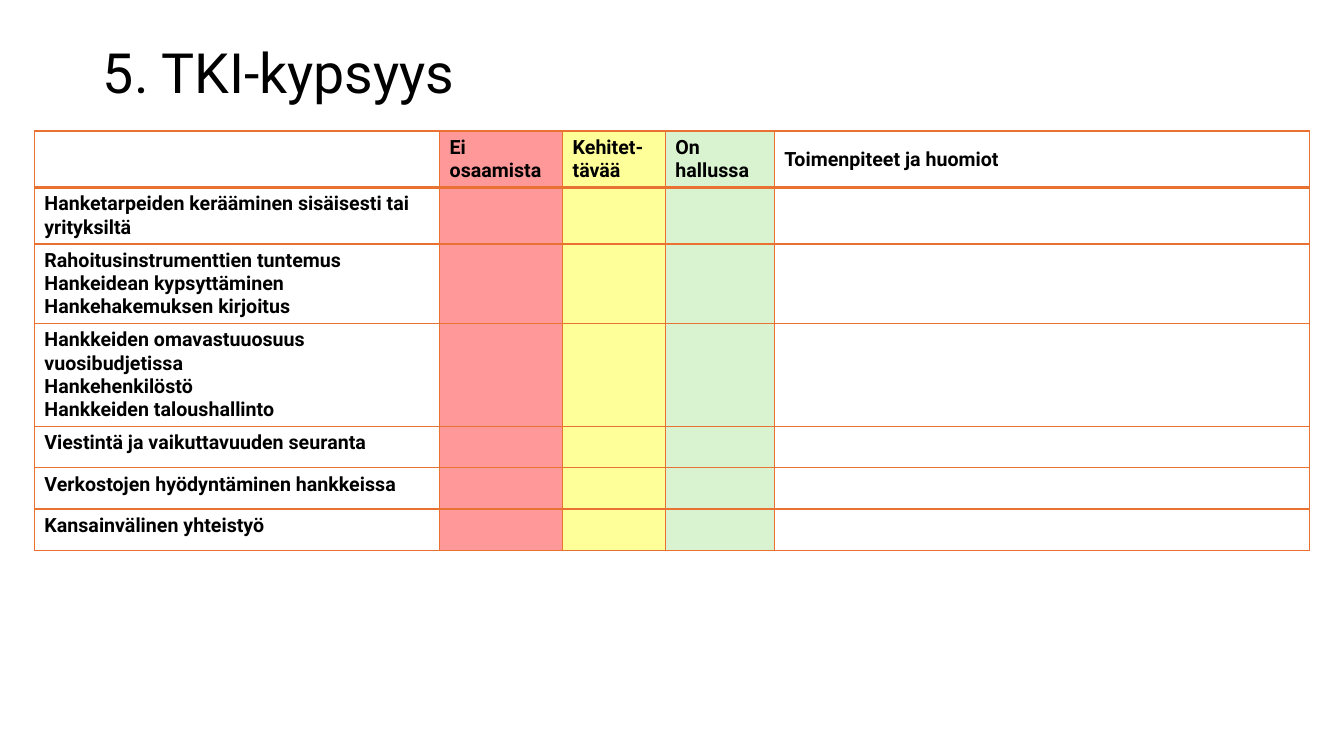
from lxml.etree import SubElement
from pptx import Presentation
from pptx.dml.color import RGBColor
from pptx.enum.text import MSO_ANCHOR as Anchor, MSO_AUTO_SIZE as AutoSize, PP_ALIGN as Align
from pptx.oxml.ns import qn
from pptx.util import Inches, Pt

BLACK = RGBColor(0x00, 0x00, 0x00)
ORANGE = RGBColor(0xE9, 0x71, 0x32)
RED = RGBColor(0xFF, 0x99, 0x99)
YELLOW = RGBColor(0xFF, 0xFF, 0x99)
GREEN = RGBColor(0xD9, 0xF2, 0xD0)

TITLE_BOX = (0.92, 0.4, 11.5, 0.7)
MATRIX_BOX = (0.34, 1.3, 12.65, 4.18)
COLUMN_WIDTHS = (4.02, 1.22, 1.02, 1.08, 5.31)
COLUMN_FILLS = (None, RED, YELLOW, GREEN, None)
MIN_ROW, LINE, CELL_PADDING = 0.41, 0.23, 0.1

HEADINGS = ("", "Ei osaamista", "Kehitet-tävää", "On hallussa", "Toimenpiteet ja huomiot")
TOPICS = (
    (2, "Hanketarpeiden kerääminen sisäisesti tai yrityksiltä"),
    (3, "Rahoitusinstrumenttien tuntemus\nHankeidean kypsyttäminen\nHankehakemuksen kirjoitus"),
    (4, "Hankkeiden omavastuuosuus vuosibudjetissa\nHankehenkilöstö\nHankkeiden taloushallinto"),
    (1, "Viestintä ja vaikuttavuuden seuranta"),
    (1, "Verkostojen hyödyntäminen hankkeissa"),
    (1, "Kansainvälinen yhteistyö"),
)


def write(frame, text, size=14, bold=False, spacing=1.0, anchor=Anchor.TOP):
    frame.text = text
    frame.vertical_anchor = anchor
    for paragraph in frame.paragraphs:
        paragraph.alignment = Align.LEFT
        paragraph.line_spacing = spacing
        font = paragraph.font
        if paragraph.runs:
            font = paragraph.runs[0].font
        font.name = "Roboto"
        font.size = Pt(size)
        font.bold = bold
        font.color.rgb = BLACK


def draw_borders(cell, **widths):
    properties = cell._tc.get_or_add_tcPr()
    for side in ("lnL", "lnR", "lnT", "lnB"):
        border = SubElement(properties, qn(f"a:{side}"), w=str(Pt(widths.get(side, 1))))
        paint = SubElement(border, qn("a:solidFill"))
        SubElement(paint, qn("a:srgbClr"), val=str(ORANGE))


def fill_cell(cell, color):
    if color is None:
        cell.fill.background()
    else:
        cell.fill.solid()
        cell.fill.fore_color.rgb = color


def add_heading(slide, box):
    title = slide.shapes.title
    title.left, title.top, title.width, title.height = map(Inches, box)
    title.text_frame.auto_size = AutoSize.NONE
    write(title.text_frame, "5. TKI-kypsyys", size=39.6, spacing=0.9, anchor=Anchor.MIDDLE)


def add_maturity_matrix(slide, box):
    rows = [(2, HEADINGS)] + [(lines, (topic, "", "", "", "")) for lines, topic in TOPICS]
    matrix = slide.shapes.add_table(len(rows), len(HEADINGS), *map(Inches, box)).table
    matrix.first_row = matrix.horz_banding = False
    for column, width in zip(matrix.columns, COLUMN_WIDTHS):
        column.width = Inches(box[2] * width / sum(COLUMN_WIDTHS))
    for row_index, (lines, texts) in enumerate(rows):
        matrix.rows[row_index].height = Inches(max(MIN_ROW, lines * LINE + CELL_PADDING))
        anchor = Anchor.TOP if row_index else Anchor.MIDDLE
        borders = {"lnT": 2} if row_index == 1 else {} if row_index else {"lnB": 2}
        for column_index, text in enumerate(texts):
            cell = matrix.cell(row_index, column_index)
            cell.vertical_anchor = anchor
            write(cell.text_frame, text, bold=True, anchor=None)
            draw_borders(cell, **borders)
            fill_cell(cell, COLUMN_FILLS[column_index])


def main():
    deck = Presentation()
    deck.slide_width, deck.slide_height = Inches(13.33), Inches(7.5)
    slide = deck.slides.add_slide(deck.slide_layouts[5])
    add_heading(slide, TITLE_BOX)
    add_maturity_matrix(slide, MATRIX_BOX)
    deck.save("out.pptx")


if __name__ == "__main__":
    main()
